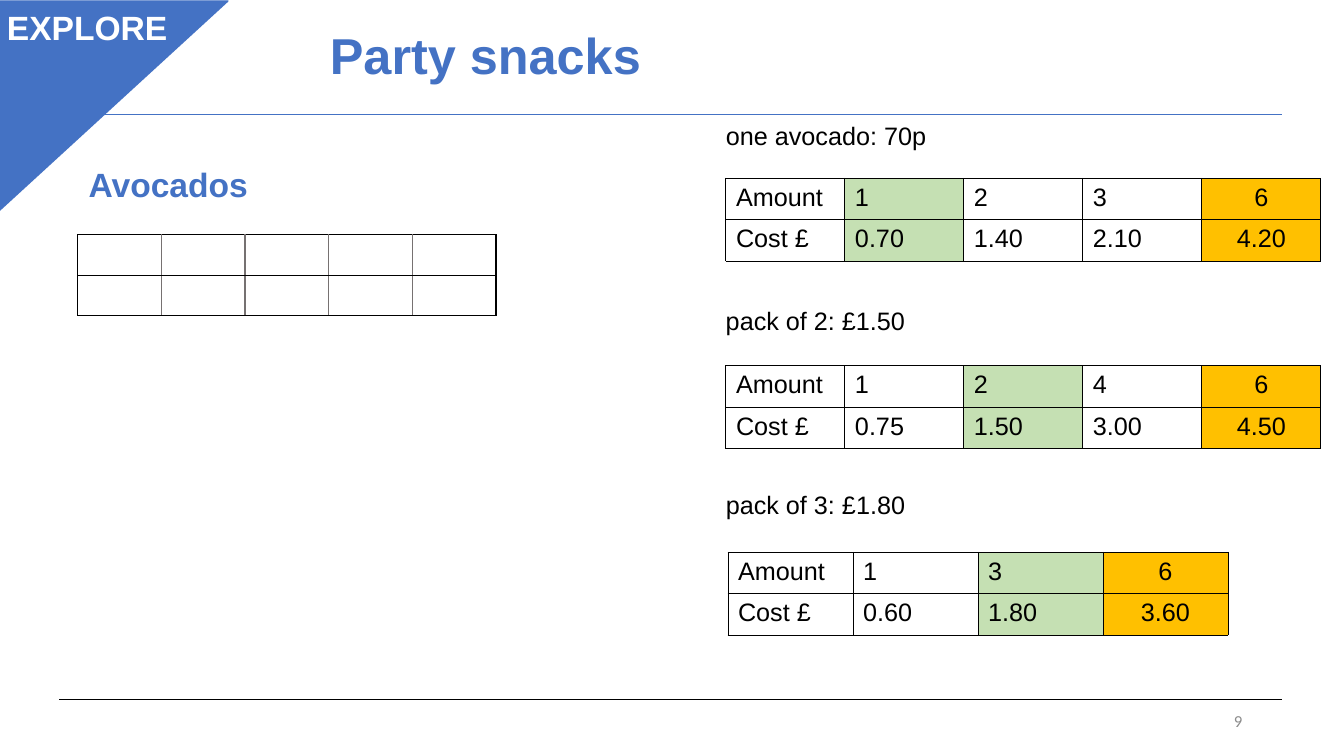
from dataclasses import dataclass

from lxml import etree
from pptx import Presentation
from pptx.dml.color import RGBColor
from pptx.enum.shapes import MSO_CONNECTOR, MSO_SHAPE
from pptx.enum.text import MSO_ANCHOR, PP_ALIGN
from pptx.oxml.ns import qn
from pptx.shapes.autoshape import Shape
from pptx.slide import Slide
from pptx.table import _Cell
from pptx.util import Emu, Pt

LEFT, CENTER, RIGHT = PP_ALIGN.LEFT, PP_ALIGN.CENTER, PP_ALIGN.RIGHT
TOP, MIDDLE = MSO_ANCHOR.TOP, MSO_ANCHOR.MIDDLE
STRAIGHT = MSO_CONNECTOR.STRAIGHT
TRIANGLE = MSO_SHAPE.ISOSCELES_TRIANGLE

BLUE, BLACK, WHITE = "4472C4", "000000", "FFFFFF"
GRAY, PAGE_GRAY = "767171", "8C8C8C"
GREEN, AMBER = "C5E0B3", "FFC000"


@dataclass(frozen=True)
class Label:
    text: str
    box: tuple[int, int, int, int]
    size: int = 18
    color: str = BLACK
    bold: bool = False
    font: str = "Arial"
    align: PP_ALIGN = LEFT
    anchor: MSO_ANCHOR = TOP


@dataclass(frozen=True)
class Grid:
    left: int
    top: int
    column_width: int
    row_height: int
    rows: tuple[tuple[str, ...], ...]
    green_column: int | None = None
    amber_column: int | None = None
    inner_color: str = BLACK
    line_width: float = 0.75


TITLE = Label("Party snacks", (15, 2, 933, 111), 36, BLUE, True, align=CENTER, anchor=MIDDLE)
LABELS = (
    Label("Avocados", (78, 158, 182, 50), 24, BLUE, True),
    Label("EXPLORE", (-3, 2, 186, 50), 24, WHITE, True),
    Label("one avocado: 70p", (710, 114, 225, 40)),
    Label("pack of 2: £1.50", (710, 298, 253, 40)),
    Label("pack of 3: £1.80", (710, 481, 262, 40)),
    Label("9", (942, 695, 300, 40), 12, PAGE_GRAY, font="Calibri", align=RIGHT, anchor=MIDDLE),
)
GRIDS = (
    Grid(77, 233, 83, 40, (("",) * 5,) * 2, inner_color=GRAY, line_width=1),
    Grid(720, 177, 118, 41,
         (("Amount", "1", "2", "3", "6"), ("Cost £", "0.70", "1.40", "2.10", "4.20")), 1, 4),
    Grid(720, 363, 118, 41,
         (("Amount", "1", "2", "4", "6"), ("Cost £", "0.75", "1.50", "3.00", "4.50")), 2, 4),
    Grid(722, 548, 124, 41,
         (("Amount", "1", "3", "6"), ("Cost £", "0.60", "1.80", "3.60")), 2, 3),
)


def px(value: int) -> Emu:
    """Turn px, a hundred to the inch, into EMU."""
    return Emu(value * 9144)


def rgb(value: str) -> RGBColor:
    """Turn a hex string into a colour."""
    return RGBColor.from_string(value)


def write_label(shape: Shape, label: Label) -> None:
    """Place a shape and fill it with formatted text."""
    shape.left, shape.top, shape.width, shape.height = map(px, label.box)
    frame = shape.text_frame
    frame.word_wrap = True
    frame.vertical_anchor = label.anchor
    frame.text = label.text
    paragraph = frame.paragraphs[0]
    paragraph.alignment = label.align
    paragraph.font.name = label.font
    paragraph.font.size = Pt(label.size)
    paragraph.font.bold = label.bold
    paragraph.font.color.rgb = rgb(label.color)


def draw_rule(slide: Slide, top: int, color: str) -> None:
    """Draw a horizontal rule across the slide."""
    rule = slide.shapes.add_connector(STRAIGHT, px(59), px(top), px(1272), px(top))
    rule.line.color.rgb = rgb(color)
    rule.line.width = Pt(0.75)
    etree.SubElement(rule.element.spPr, qn("a:effectLst"))


def draw_corner(slide: Slide) -> None:
    """Draw the blue triangle in the top left corner."""
    corner = slide.shapes.add_shape(TRIANGLE, px(-3), px(1), px(229), px(210))
    corner.adjustments[0] = 0
    corner.rotation = 180
    corner.element.spPr.find(qn("a:xfrm")).set("flipH", "1")
    corner.shadow.inherit = False
    corner.fill.solid()
    corner.fill.fore_color.rgb = rgb(BLUE)
    corner.line.color.rgb = rgb(BLUE)
    corner.line.width = Pt(1)


def set_borders(cell: _Cell, colors: dict[str, str], width: float) -> None:
    """Give each side of a cell a solid line."""
    properties = cell._tc.get_or_add_tcPr()
    for side, color in colors.items():
        line = etree.SubElement(properties, qn(f"a:ln{side}"), w=str(Pt(width)))
        fill = etree.SubElement(line, qn("a:solidFill"))
        etree.SubElement(fill, qn("a:srgbClr"), val=color)


def draw_grid(slide: Slide, grid: Grid) -> None:
    """Draw a table with its borders, highlighted columns and text."""
    column_count, row_count = len(grid.rows[0]), len(grid.rows)
    table = slide.shapes.add_table(
        row_count, column_count, px(grid.left), px(grid.top),
        px(grid.column_width * column_count), px(grid.row_height * row_count)).table
    table.first_row = table.horz_banding = False
    for row in table.rows:
        row.height = px(grid.row_height)
    fills = {grid.green_column: GREEN, grid.amber_column: AMBER}
    for row_index, values in enumerate(grid.rows):
        for column_index, value in enumerate(values):
            cell = table.cell(row_index, column_index)
            is_last = column_index == column_count - 1
            set_borders(cell, {
                "L": grid.inner_color if column_index else BLACK,
                "R": BLACK if is_last else grid.inner_color,
                "T": BLACK,
                "B": BLACK,
            }, grid.line_width)
            if column_index in fills:
                cell.fill.solid()
                cell.fill.fore_color.rgb = rgb(fills[column_index])
            else:
                cell.fill.background()
            cell.text = value
            paragraph = cell.text_frame.paragraphs[0]
            paragraph.alignment = CENTER if column_index == grid.amber_column else LEFT
            paragraph.font.name = "Arial"
            paragraph.font.size = Pt(18)
            paragraph.font.color.rgb = rgb(BLACK)


def main() -> None:
    """Build the slide and save it."""
    presentation = Presentation()
    presentation.slide_width, presentation.slide_height = px(1333), px(750)
    slide = presentation.slides.add_slide(presentation.slide_layouts[5])
    draw_rule(slide, 694, BLACK)
    draw_rule(slide, 114, BLUE)
    draw_corner(slide)
    write_label(slide.shapes.title, TITLE)
    slide.shapes.title.text_frame.paragraphs[0].line_spacing = 0.9
    for label in LABELS:
        write_label(slide.shapes.add_textbox(*map(px, label.box)), label)
    for grid in GRIDS:
        draw_grid(slide, grid)
    presentation.save("out.pptx")


if __name__ == "__main__":
    main()
